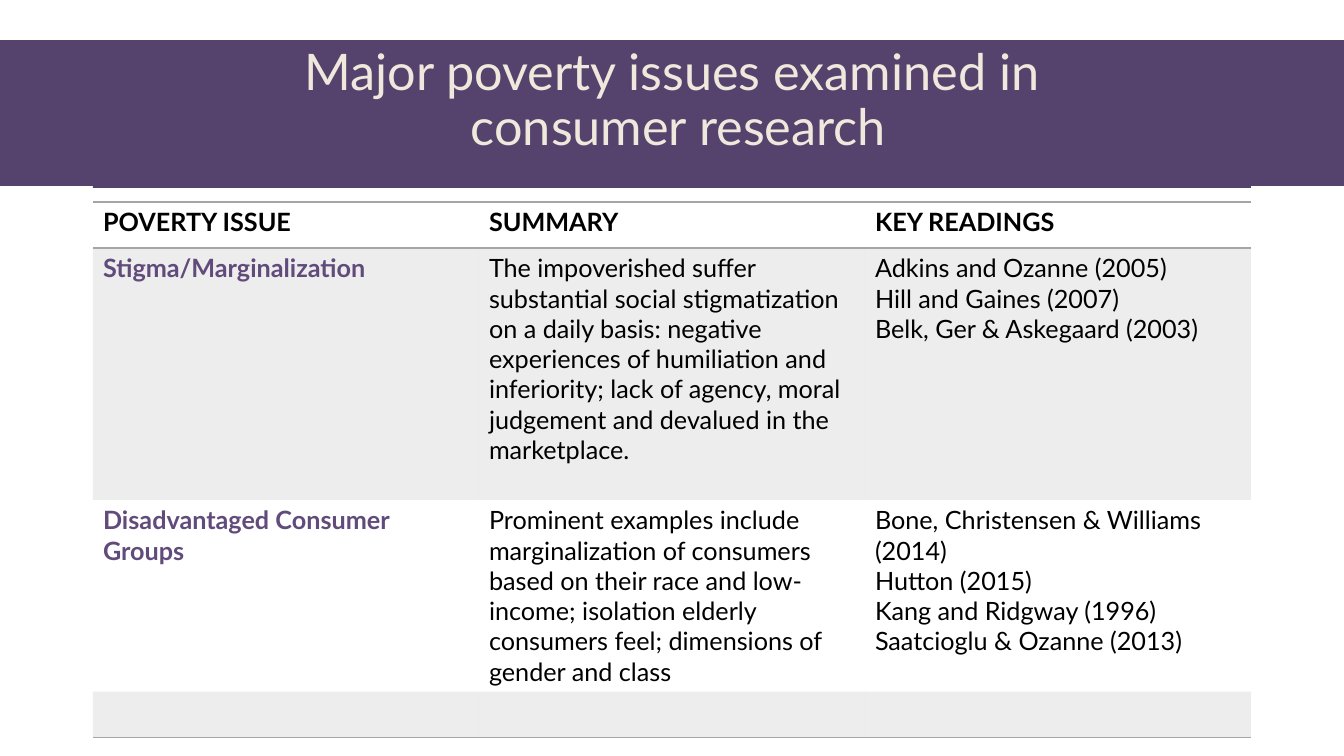
from dataclasses import dataclass

from lxml import etree
from pptx import Presentation
from pptx import util as u
from pptx.dml.color import RGBColor
from pptx.enum import shapes, text
from pptx.oxml.ns import qn

SCALE = 914400 / 100.8
FONT = "Lato"
COLORS = {
    "band": "56436D",
    "cream": "EFE8DC",
    "issue": "604B7B",
    "ink": "000000",
    "gray": "A5A5A5",
}
LEFT = 93
COL = 386
TOP = 202


@dataclass(frozen=True)
class Row:
    height: int
    cells: tuple[str, str, str]
    head: bool = False
    shade: bool = False
    edges: str = ""


ROWS = [
    Row(46, ("POVERTY ISSUE", "SUMMARY", "KEY READINGS"), head=True, edges="TB"),
    Row(252, (
        "Stigma/Marginalization",
        "The impoverished suffer substantial social stigmatization on a daily basis: "
        "negative experiences of humiliation and inferiority; lack of agency, moral "
        "judgement and devalued in the marketplace.",
        "Adkins and Ozanne (2005)\nHill and Gaines (2007)\nBelk, Ger & Askegaard (2003)",
    ), shade=True, edges="T"),
    Row(191, (
        "Disadvantaged Consumer Groups",
        "Prominent examples include marginalization of consumers based on their race "
        "and low-income; isolation elderly consumers feel; dimensions of gender and class",
        "Bone, Christensen & Williams (2014)\nHutton (2015)\n"
        "Kang and Ridgway (1996)\nSaatcioglu & Ozanne (2013)",
    )),
    Row(46, ("", "", ""), shade=True, edges="B"),
]


def px(n: int) -> u.Emu:
    return u.Emu(round(n * SCALE))


def rgb(name: str) -> RGBColor:
    return RGBColor.from_string(COLORS[name])


def style(frame, size: int, color: str, bold: bool = False) -> None:
    for para in frame.paragraphs:
        for run in para.runs:
            run.font.name = FONT
            run.font.size = u.Pt(size)
            run.font.bold = bold
            run.font.color.rgb = rgb(color)


def border(cell, edges: str) -> None:
    props = cell._tc.get_or_add_tcPr()
    for side in "LRTB":
        line = etree.SubElement(props, qn(f"a:ln{side}"), w=str(u.Pt(1)))
        if side in edges:
            fill = etree.SubElement(line, qn("a:solidFill"))
            etree.SubElement(fill, qn("a:srgbClr"), val=COLORS["gray"])
        else:
            etree.SubElement(line, qn("a:noFill"))


def paint(cell, shade: bool) -> None:
    if not shade:
        cell.fill.background()
        return
    cell.fill.solid()
    cell.fill.fore_color.rgb = rgb("gray")
    color = cell._tc.tcPr.find(qn("a:solidFill")).find(qn("a:srgbClr"))
    etree.SubElement(color, qn("a:alpha"), val="20000")


def add_band(slide) -> None:
    band = slide.shapes.add_shape(
        shapes.MSO_SHAPE.RECTANGLE, 0, px(40), px(1344), px(146))
    band.shadow.inherit = False
    band.fill.solid()
    band.fill.fore_color.rgb = rgb("band")
    band.line.fill.background()
    slide.shapes.title._element.addprevious(band._element)


def set_title(slide) -> None:
    title = slide.shapes.title
    title.left, title.top = px(LEFT), px(42)
    title.width, title.height = px(3 * COL), px(146)
    title.fill.solid()
    title.fill.fore_color.rgb = rgb("band")
    frame = title.text_frame
    frame.text = "Major poverty issues examined in\v consumer research"
    frame.word_wrap = True
    frame.auto_size = text.MSO_AUTO_SIZE.NONE
    frame.vertical_anchor = text.MSO_ANCHOR.TOP
    para = frame.paragraphs[0]
    para.alignment = text.PP_ALIGN.CENTER
    para.line_spacing = 0.9
    style(frame, 36, "cream")


def add_grid(slide) -> None:
    total = sum(row.height for row in ROWS)
    table = slide.shapes.add_table(
        len(ROWS), 3, px(LEFT), px(TOP), px(3 * COL), px(total)).table
    table.first_row = False
    table.horz_banding = False
    for col in table.columns:
        col.width = px(COL)
    for r, row in enumerate(ROWS):
        table.rows[r].height = px(row.height)
        for c, words in enumerate(row.cells):
            cell = table.cell(r, c)
            cell.text_frame.text = words
            color = "issue" if c == 0 and not row.head else "ink"
            style(cell.text_frame, 18, color, row.head or c == 0)
            border(cell, row.edges)
            paint(cell, row.shade)


def main() -> None:
    deck = Presentation()
    deck.slide_width, deck.slide_height = px(1344), px(756)
    slide = deck.slides.add_slide(deck.slide_layouts[5])
    add_band(slide)
    set_title(slide)
    add_grid(slide)
    deck.save("out.pptx")


if __name__ == "__main__":
    main()
